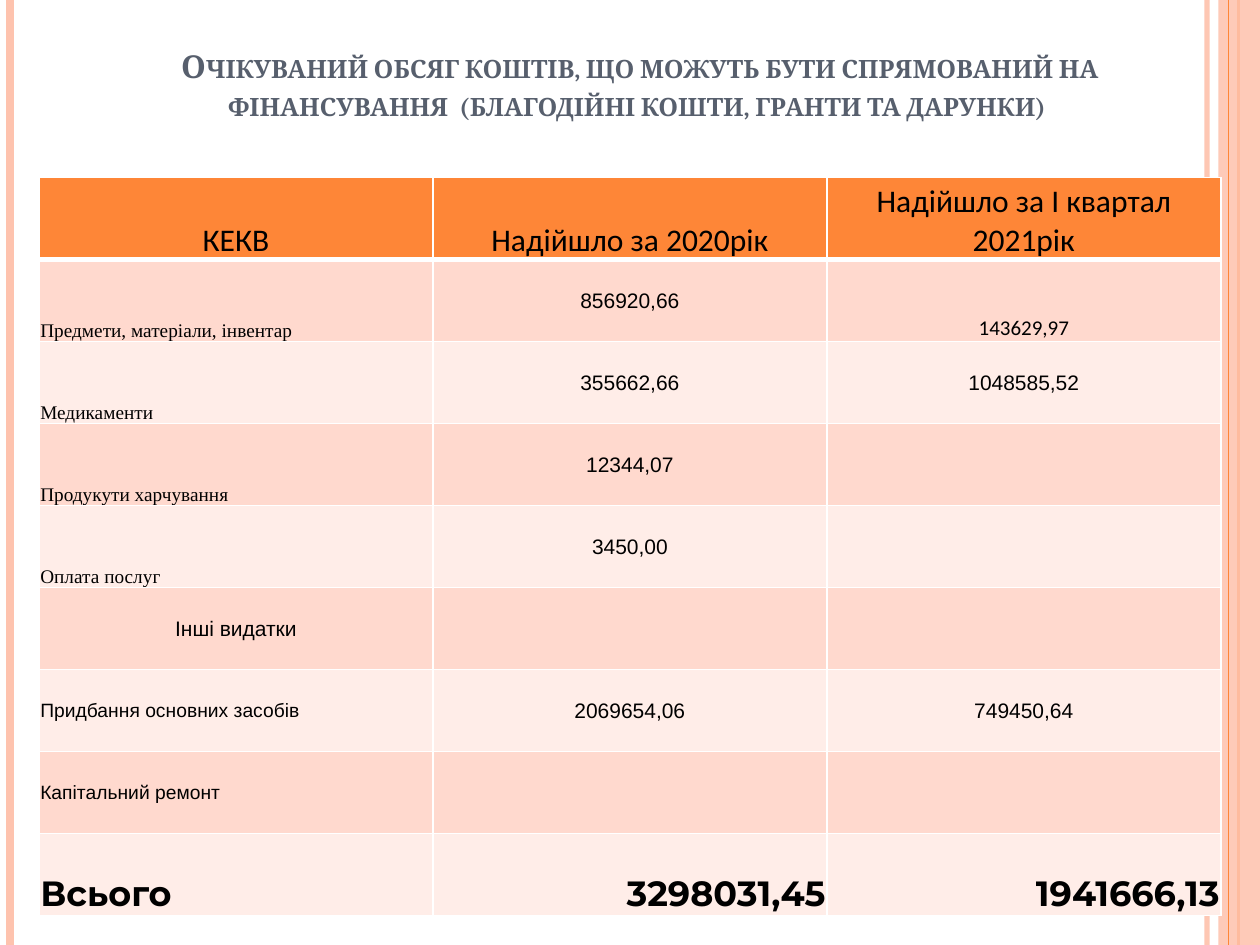
from dataclasses import dataclass
from typing import Optional

from lxml import etree
from pptx import Presentation
from pptx import util as u
from pptx.dml import color
from pptx.enum import shapes, text
from pptx.oxml import ns


@dataclass(frozen=True)
class Theme:
    orange: str = "FE8637"
    peach: str = "FEC3AE"
    band_dark: str = "FFD9CE"
    band_light: str = "FFEDE8"
    border: str = "FFFFFF"
    title: str = "575F6D"
    ink: str = "000000"
    heading_size: float = 18
    label_size: float = 11
    value_size: float = 12
    total_size: float = 20


@dataclass(frozen=True)
class Style:
    font: str
    size: float
    align: text.PP_ALIGN
    anchor: text.MSO_ANCHOR
    bold: bool = False


@dataclass(frozen=True)
class Entry:
    content: str
    style: Style


@dataclass(frozen=True)
class Stripe:
    x: float
    color: str
    width: float
    opacity: int = 100


THEME = Theme()
LEFT, CENTER, RIGHT = text.PP_ALIGN.LEFT, text.PP_ALIGN.CENTER, text.PP_ALIGN.RIGHT
MIDDLE, BOTTOM = text.MSO_ANCHOR.MIDDLE, text.MSO_ANCHOR.BOTTOM

HEADER = Style("Calibri", THEME.heading_size, CENTER, BOTTOM)
SERIF_LABEL = Style("Times New Roman", THEME.label_size, LEFT, BOTTOM)
SANS_LABEL = Style("Arial", THEME.label_size, LEFT, MIDDLE)
VALUE = Style("Arial", THEME.value_size, CENTER, MIDDLE)
LOW_VALUE = Style("Calibri", THEME.value_size, CENTER, BOTTOM)
TOTAL_LABEL = Style("Montserrat", THEME.total_size, LEFT, BOTTOM, True)
TOTAL = Style("Montserrat", THEME.total_size, RIGHT, BOTTOM, True)

TITLE = (" Очікуваний обсяг коштів, що можуть бути спрямований на "
         "фінансування  (благодійні кошти, гранти та дарунки)")
ROWS: list[list[Optional[Entry]]] = [
    [Entry("КЕКВ", HEADER), Entry("Надійшло за 2020рік", HEADER),
     Entry("Надійшло за І квартал 2021рік", HEADER)],
    [Entry("Предмети, матеріали, інвентар", SERIF_LABEL), Entry("856920,66", VALUE),
     Entry("143629,97", LOW_VALUE)],
    [Entry("Медикаменти", SERIF_LABEL), Entry("355662,66", VALUE), Entry("1048585,52", VALUE)],
    [Entry("Продукути харчування", SERIF_LABEL), Entry("12344,07", VALUE), None],
    [Entry("Оплата послуг", SERIF_LABEL), Entry("3450,00", VALUE), None],
    [Entry("Інші видатки", VALUE), None, None],
    [Entry("Придбання основних засобів", SANS_LABEL), Entry("2069654,06", VALUE),
     Entry("749450,64", VALUE)],
    [Entry("Капітальний ремонт", SANS_LABEL), None, None],
    [Entry("Всього", TOTAL_LABEL), Entry("3298031,45", TOTAL), Entry("1941666,13", TOTAL)],
]
BACK_STRIPES = [Stripe(9.58, THEME.peach, 3, 93), Stripe(0.08, THEME.peach, 4.5),
                Stripe(9.83, THEME.orange, 1.5)]
FRONT_STRIPE = Stripe(9.75, THEME.orange, 0.75)


def rgb(value: str) -> color.RGBColor:
    return color.RGBColor.from_string(value)


def set_opacity(shape, percent: int) -> None:
    fill_color = next(shape._element.spPr.iter(ns.qn("a:srgbClr")))
    etree.SubElement(fill_color, ns.qn("a:alpha"), val=str(percent * 1000))


def draw_stripe(slide, stripe: Stripe) -> None:
    x = u.Inches(stripe.x)
    line = slide.shapes.add_connector(
        shapes.MSO_CONNECTOR.STRAIGHT, x, 0, x, u.Inches(7.5))
    line.line.color.rgb = rgb(stripe.color)
    line.line.width = u.Pt(stripe.width)
    if stripe.opacity < 100:
        set_opacity(line, stripe.opacity)
    etree.SubElement(line._element.spPr, ns.qn("a:effectLst"))


def draw_side_band(slide) -> None:
    band = slide.shapes.add_shape(
        shapes.MSO_SHAPE.RECTANGLE, u.Inches(9.67), 0, u.Inches(0.33), u.Inches(7.5))
    band.shadow.inherit = False
    band.fill.solid()
    band.fill.fore_color.rgb = rgb(THEME.peach)
    band.line.fill.background()
    set_opacity(band, 87)


def write(paragraph, content: str, style: Style, ink: str) -> None:
    paragraph.text = content
    paragraph.alignment = style.align
    paragraph.font.name = style.font
    paragraph.font.size = u.Pt(style.size)
    paragraph.font.bold = style.bold
    paragraph.font.color.rgb = rgb(ink)


def draw_title(slide) -> None:
    box = slide.shapes.add_textbox(
        u.Inches(0.5), u.Inches(0.3), u.Inches(9.11), u.Inches(0.72))
    style = Style("Cambria", THEME.heading_size, CENTER, BOTTOM, True)
    frame = box.text_frame
    frame.word_wrap = True
    frame.vertical_anchor = style.anchor
    paragraph = frame.paragraphs[0]
    write(paragraph, TITLE, style, THEME.title)
    paragraph.runs[0]._r.get_or_add_rPr().set("cap", "small")


def set_borders(cell, top: float, bottom: float) -> None:
    properties = cell._tc.get_or_add_tcPr()
    for side, width in (("L", 1), ("R", 1), ("T", top), ("B", bottom)):
        line = etree.SubElement(properties, ns.qn(f"a:ln{side}"), w=str(u.Pt(width)))
        fill = etree.SubElement(line, ns.qn("a:solidFill"))
        etree.SubElement(fill, ns.qn("a:srgbClr"), val=THEME.border)


def fill_cell(cell, entry: Optional[Entry], row: int) -> None:
    set_borders(cell, top=3 if row == 1 else 1, bottom=3 if row == 0 else 1)
    band = THEME.band_dark if row % 2 else THEME.band_light
    cell.fill.solid()
    cell.fill.fore_color.rgb = rgb(band if row else THEME.orange)
    if entry:
        cell.margin_left = cell.margin_right = cell.margin_top = u.Inches(0.01)
        cell.margin_bottom = 0
        cell.vertical_anchor = entry.style.anchor
        write(cell.text_frame.paragraphs[0], entry.content, entry.style, THEME.ink)


def draw_funding_table(slide) -> None:
    table = slide.shapes.add_table(
        len(ROWS), len(ROWS[0]), u.Inches(0.31), u.Inches(1.41),
        u.Inches(9.38), u.Inches(5.86)).table
    table.first_row = False
    table.horz_banding = False
    for row, entries in enumerate(ROWS):
        for column, entry in enumerate(entries):
            fill_cell(table.cell(row, column), entry, row)


def main() -> None:
    presentation = Presentation()
    presentation.slide_width = u.Inches(10)
    presentation.slide_height = u.Inches(7.5)
    slide = presentation.slides.add_slide(presentation.slide_layouts[6])
    for stripe in BACK_STRIPES:
        draw_stripe(slide, stripe)
    draw_side_band(slide)
    draw_stripe(slide, FRONT_STRIPE)
    draw_title(slide)
    draw_funding_table(slide)
    presentation.save("out.pptx")


if __name__ == "__main__":
    main()
